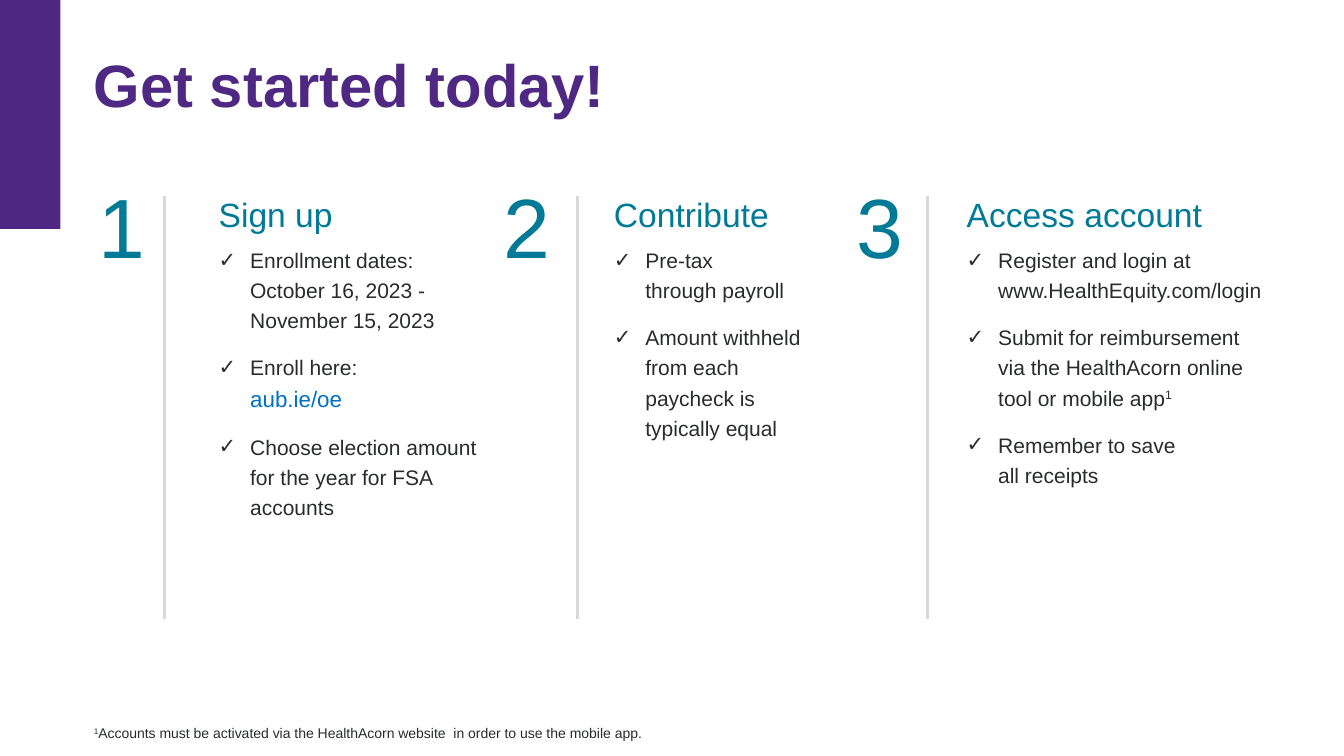
from pptx import Presentation
from pptx.dml.color import RGBColor
from pptx.enum import shapes, text
from pptx.oxml.ns import qn
from pptx.util import Pt
from lxml import etree

PURPLE = RGBColor(0x4F, 0x28, 0x83)
TEAL = RGBColor(0x00, 0x7A, 0x96)
INK = RGBColor(0x2A, 0x2C, 0x2C)
BLUE = RGBColor(0x00, 0x70, 0xC0)
GREY = RGBColor(0xD9, 0xD9, 0xD9)
FONT = "Arial"
HANG = 22.5

# Each step: box left, rule offset, list offset, list width, heading, items.
# An item is a list of (text, style) runs; "\n" breaks the line.
STEPS = [
    (51.1, 66.3, 97.9, 204.5, "Sign up", [
        [("Enrollment dates: October 16, 2023 -\nNovember 15, 2023", "")],
        [("Enroll here:\n", ""), ("aub.ie/oe", "link")],
        [("Choose election amount for the year for FSA accounts", "")]]),
    (340.6, 72, 90.7, 162.7, "Contribute", [
        [("Pre-tax\nthrough payroll", "")],
        [("Amount withheld from each paycheck is typically equal", "")]]),
    (592.6, 69.8, 90.7, 226.1, "Access account", [
        [("Register and login at www.HealthEquity.com/login", "")],
        [("Submit for reimbursement via\u00a0the HealthAcorn online "
          "tool or mobile app", ""), ("1", "sup")],
        [("Remember to save\nall receipts", "")]]),
]


def place(shape, x, y, w, h):
    shape.left, shape.top, shape.width, shape.height = map(Pt, (x, y, w, h))


def frame(shape, pad=True):
    """Set a text frame to wrap from the top, with or without insets."""
    tf = shape.text_frame
    tf.word_wrap = True
    tf.auto_size = text.MSO_AUTO_SIZE.NONE
    tf.vertical_anchor = text.MSO_ANCHOR.TOP
    side, end = (7.2, 3.6) if pad else (0, 0)
    tf.margin_left = tf.margin_right = Pt(side)
    tf.margin_top = tf.margin_bottom = Pt(end)
    return tf


def style(para, line, after=0, align=text.PP_ALIGN.LEFT):
    para.line_spacing = line
    para.space_before, para.space_after = Pt(0), Pt(after)
    para.alignment = align


def mark(para, sign=None):
    """Give a paragraph a hanging bullet, or none."""
    props = para._p.get_or_add_pPr()
    hang = Pt(HANG) if sign else 0
    props.set("marL", str(hang))
    props.set("indent", str(-hang))
    if sign:
        etree.SubElement(props, qn("a:buFont"), typeface=FONT)
        etree.SubElement(props, qn("a:buChar"), char=sign)
    else:
        etree.SubElement(props, qn("a:buNone"))


def write(para, words, size, color, bold=False, raised=False):
    for i, part in enumerate(words.split("\n")):
        if i:
            para.add_line_break()
        if not part:
            continue
        run = para.add_run()
        run.text = part
        font = run.font
        font.name, font.size, font.bold = FONT, Pt(size), bold
        font.color.rgb = color
        if raised:
            run._r.get_or_add_rPr().set("baseline", "30000")


def banner(slide, x, y, w, h):
    bar = slide.shapes.add_shape(shapes.MSO_SHAPE.RECTANGLE, Pt(x), Pt(y), Pt(w), Pt(h))
    bar.shadow.inherit = False
    bar.fill.solid()
    bar.fill.fore_color.rgb = PURPLE
    bar.line.fill.background()


def title(shape, x, y, w, h):
    place(shape, x, y, w, h)
    para = frame(shape, False).paragraphs[0]
    style(para, 1.1)
    write(para, "Get started today!", 42.7, PURPLE, True)


def rule(slide, x, y, h):
    line = slide.shapes.add_connector(
        shapes.MSO_CONNECTOR.STRAIGHT, Pt(x), Pt(y), Pt(x), Pt(y + h))
    line.line.color.rgb, line.line.width = GREY, Pt(2)
    etree.SubElement(line._element.spPr, qn("a:effectLst"))


def column(slide, body, num, y, step):
    x, gap, inset, wide, head, items = step
    digit = slide.shapes.add_textbox(Pt(x), Pt(y), Pt(72), Pt(26.6))
    para = frame(digit).paragraphs[0]
    style(para, 1.0, align=text.PP_ALIGN.CENTER)
    write(para, str(num), 60, TEAL)
    rule(slide, x + gap, y + 18.7, 302.4)

    place(body, x + inset, y + 10.8, wide, 253.4)
    tf = frame(body)
    para = tf.paragraphs[0]
    style(para, 1.1, 6)
    mark(para)
    write(para, head, 24, TEAL)
    for item in items:
        para = tf.add_paragraph()
        style(para, 1.2, 12)
        mark(para, "✓")
        for words, kind in item:
            link = kind == "link"
            write(para, words, 16 if link else 15, BLUE if link else INK,
                  raised=kind == "sup")


def footnote(shape, x, y, w, h):
    place(shape, x, y, w, h)
    para = frame(shape, False).paragraphs[0]
    style(para, 1.3, 8)
    mark(para)
    write(para, "1", 10, INK, raised=True)
    write(para, "Accounts must be activated via the HealthAcorn\u00a0website\u00a0 "
          "in order to use the mobile app.", 10, INK)


def main():
    deck = Presentation()
    deck.slide_width, deck.slide_height = Pt(960), Pt(540)
    slide = deck.slides.add_slide(deck.slide_layouts.get_by_name("Comparison"))
    head, *lists, note = list(slide.placeholders)[:5]
    banner(slide, 0, 0, 43.2, 163.6)
    title(head, 67, 28.8, 853.2, 52.6)
    for num, (body, step) in enumerate(zip(lists, STEPS), 1):
        column(slide, body, num, 121, step)
    footnote(note, 67, 514, 846, 14.4)
    deck.save("out.pptx")


if __name__ == "__main__":
    main()
